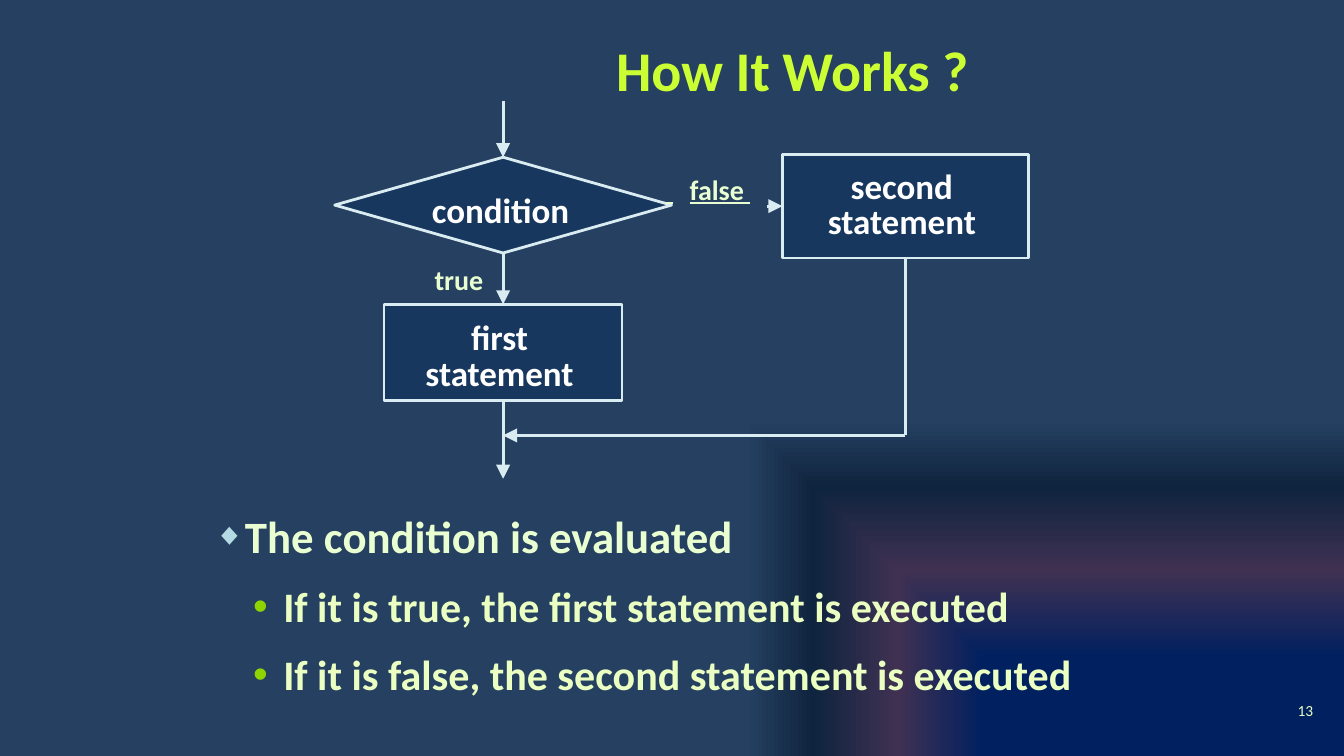
from dataclasses import dataclass

from pptx import Presentation
from pptx import util as u
from pptx.dml.color import RGBColor
from pptx.enum import shapes, text
from pptx.oxml import parse_xml
from pptx.oxml.ns import nsdecls, qn
from lxml import etree


@dataclass(frozen=True)
class Theme:
    font: str = "Calibri"
    title: str = "CCFF33"
    lead: str = "EAFFD1"
    detail: str = "EAFFC1"
    box: str = "17375E"
    line: str = "D9ECF1"
    node_text: str = "FFFFFF"
    title_size: float = 40
    node_size: float = 25
    label_size: float = 20
    number_size: float = 11
    line_width: float = 2
    stops: tuple = ((26, "002060"), (49, "403152"), (71, "0F243E"), (89, "254061"))


T = Theme()
TITLE = "How It Works ?"
BULLETS = [
    ("The condition is evaluated", 0),
    ("If it is true, the first statement is executed", 1),
    ("If it is false, the second statement is executed", 1),
]
LEVELS = [
    dict(size=32, color=T.lead, char="◆", bullet="B4DAE4", pct=69, left=0.32, hang=0.31, before=0),
    dict(size=30, color=T.detail, char="•", bullet="8ED500", pct=100, left=0.7, hang=0.3, before=12.6),
]
DIAMOND, RECT = shapes.MSO_SHAPE.DIAMOND, shapes.MSO_SHAPE.RECTANGLE
NODES = {
    "condition": (DIAMOND, (3.32, 1.56, 3.34, 0.95), (0, 0.09, 0.05, 0)),
    "first statement": (RECT, (3.81, 3.02, 2.36, 0.95), (0.33, 0.11, 0.4, 0)),
    "second statement": (RECT, (7.76, 1.53, 2.44, 1.03), (0.35, 0, 0.42, 0)),
}
TOP, LEFT, BOTTOM = 0, 1, 2
FLOW_X, ENTRY_Y, MERGE_Y, EXIT_Y = 4.99, 1, 4.32, 4.75
FALSE_ARROW = 0.15


def place(s, box):
    s.left, s.top, s.width, s.height = map(u.Inches, box)


def frame(s, margins=(0, 0, 0, 0), anchor=text.MSO_ANCHOR.TOP):
    tf = s.text_frame
    tf.word_wrap = True
    tf.auto_size = text.MSO_AUTO_SIZE.NONE
    tf.vertical_anchor = anchor
    tf.margin_left, tf.margin_top, tf.margin_right, tf.margin_bottom = map(u.Inches, margins)
    return tf


def style(p, size, color, bold=True):
    for r in p.runs:
        r.font.name = T.font
        r.font.size = u.Pt(size)
        r.font.bold = bold
        r.font.color.rgb = RGBColor.from_string(color)


def outline(line):
    line.color.rgb = RGBColor.from_string(T.line)
    line.width = u.Pt(T.line_width)


def set_background(s):
    stops = "".join(
        f'<a:gs pos="{pos * 1000}"><a:srgbClr val="{color}"/></a:gs>' for pos, color in T.stops
    )
    s._element.cSld.insert(0, parse_xml(
        f'<p:bg {nsdecls("p", "a")}><p:bgPr><a:gradFill rotWithShape="1"><a:gsLst>{stops}</a:gsLst>'
        '<a:path path="rect"><a:fillToRect l="100000" t="100000"/></a:path></a:gradFill>'
        '<a:effectLst/></p:bgPr></p:bg>'
    ))


def set_bullet(p, level):
    pPr = p._p.get_or_add_pPr()
    pPr.set("marL", str(u.Inches(level["left"])))
    pPr.set("indent", str(-u.Inches(level["hang"])))
    color = etree.SubElement(pPr, qn("a:buClr"))
    etree.SubElement(color, qn("a:srgbClr"), val=level["bullet"])
    etree.SubElement(pPr, qn("a:buSzPct"), val=str(level["pct"] * 1000))
    etree.SubElement(pPr, qn("a:buFont"), typeface="Arial")
    etree.SubElement(pPr, qn("a:buChar"), char=level["char"])


def add_node(s, label, kind, box, margins):
    sp = s.shapes.add_shape(kind, *map(u.Inches, box))
    sp.shadow.inherit = False
    sp.fill.solid()
    sp.fill.fore_color.rgb = RGBColor.from_string(T.box)
    outline(sp.line)
    tf = frame(sp, margins, text.MSO_ANCHOR.MIDDLE)
    tf.text = label
    p = tf.paragraphs[0]
    p.alignment = text.PP_ALIGN.CENTER
    if kind == RECT:
        p.line_spacing = u.Pt(25.5)
    style(p, T.node_size, T.node_text)
    return sp


def add_line(s, start, end, source=None, target=None, arrow=True):
    c = s.shapes.add_connector(shapes.MSO_CONNECTOR.STRAIGHT, *map(u.Inches, start + end))
    if source:
        c.begin_connect(*source)
    if target:
        c.end_connect(*target)
    outline(c.line)
    if arrow:
        etree.SubElement(c.line._get_or_add_ln(), qn("a:tailEnd"), type="triangle", w="lg", len="lg")
    etree.SubElement(c._element.spPr, qn("a:effectLst"))


def add_label(s, box, parts, size, color, bold=True):
    sp = s.shapes.add_textbox(*map(u.Inches, box))
    p = frame(sp).paragraphs[0]
    for part in parts:
        p.add_run().text = part
    style(p, size, color, bold)
    return p


def main():
    prs = Presentation()
    prs.slide_width, prs.slide_height = u.Inches(13.33), u.Inches(7.5)
    s = prs.slides.add_slide(prs.slide_layouts[1])
    set_background(s)

    title, body = s.placeholders
    place(title, (6.11, 0.35, 7, 0.67))
    tf = frame(title)
    tf.text = TITLE
    tf.paragraphs[0].alignment = text.PP_ALIGN.LEFT
    style(tf.paragraphs[0], T.title_size, T.title)

    place(body, (2.11, 5.05, 8.87, 1.91))
    tf = frame(body)
    tf.text = "\n".join(item for item, _ in BULLETS)
    for p, (_, depth) in zip(tf.paragraphs, BULLETS):
        level = LEVELS[depth]
        p.level = depth
        set_bullet(p, level)
        p.space_before = u.Pt(level["before"])
        style(p, level["size"], level["color"])

    condition, first, second = [add_node(s, label, *node) for label, node in NODES.items()]
    x, y, w, h = NODES["second statement"][1]
    second_x, second_y = x + w / 2, y + h / 2
    merge, corner = (FLOW_X, MERGE_Y), (second_x, MERGE_Y)
    add_line(s, (FLOW_X, ENTRY_Y), (FLOW_X, 1.56), target=(condition, TOP))
    add_line(s, (FLOW_X, 2.51), (FLOW_X, 3.02), (condition, BOTTOM), (first, TOP))
    add_line(s, (FLOW_X, 3.97), (FLOW_X, EXIT_Y), (first, BOTTOM))
    add_line(s, (x - FALSE_ARROW, second_y), (x, second_y), target=(second, LEFT))
    add_line(s, (second_x, y + h), corner, (second, BOTTOM), arrow=False)
    add_line(s, corner, merge)

    add_label(s, (4.31, 2.6, 0.6, 0.34), ["true"], T.label_size, T.lead)
    p = add_label(s, (6.61, 1.71, 0.95, 0.34), [" ", "\t", "false "], T.label_size, T.lead)
    tabs = etree.SubElement(p._p.get_or_add_pPr(), qn("a:tabLst"))
    etree.SubElement(tabs, qn("a:tab"), pos=str(u.Inches(0.23)), algn="l")
    for r in p.runs:
        r.font.underline = r.text != "\t"
    add_label(s, (12.87, 6.96, 0.25, 0.19), ["13"], T.number_size, T.detail, bold=False)

    prs.save("out.pptx")


if __name__ == "__main__":
    main()
